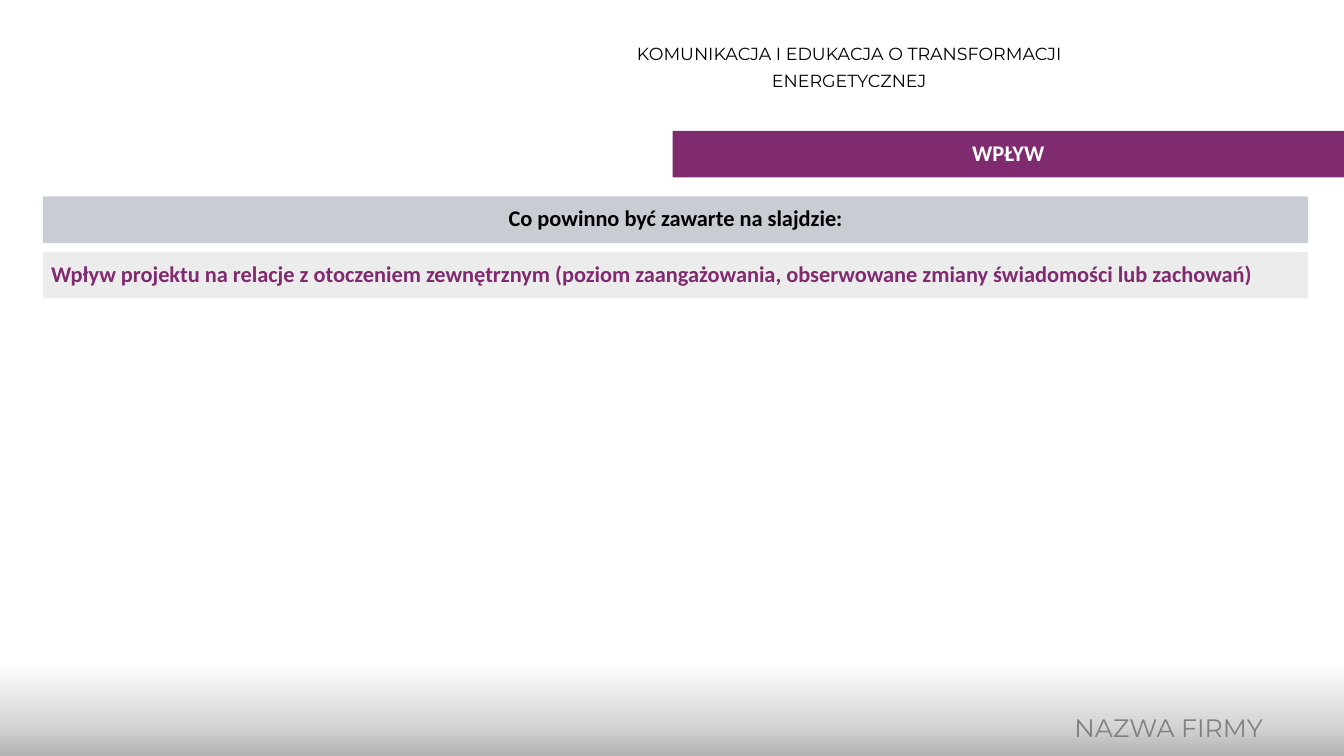
import copy

import pptx
import pptx.dml.color
import pptx.enum.shapes
import pptx.enum.text
import pptx.oxml
import pptx.oxml.ns
import pptx.util

Cm = pptx.util.Cm
Align = pptx.enum.text.PP_ALIGN
Anchor = pptx.enum.text.MSO_ANCHOR
RECTANGLE = pptx.enum.shapes.MSO_SHAPE.RECTANGLE
PURPLE = "802A70"


def color(value):
    return pptx.dml.color.RGBColor.from_string(value)


def write(shape, text, size=16, font="Calibri", fill="000000", bold=False,
          align=Align.CENTER, anchor=Anchor.TOP, spacing=1.0, inset=0.2):
    frame = shape.text_frame
    frame.word_wrap = True
    frame.vertical_anchor = anchor
    frame.margin_left = frame.margin_right = Cm(inset)
    frame.margin_top = frame.margin_bottom = Cm(min(inset, 0.2))
    paragraph = frame.paragraphs[0]
    paragraph.alignment = align
    paragraph.line_spacing = spacing
    run = paragraph.add_run()
    run.text = text
    run.font.size = pptx.util.Pt(size)
    run.font.name = font
    run.font.bold = bold
    run.font.color.rgb = color(fill)


presentation = pptx.Presentation()
presentation.slide_width = Cm(33.87)
presentation.slide_height = Cm(19.05)
slide = presentation.slides.add_slide(presentation.slide_layouts[6])

# Footer gradient, dark at the bottom
footer = slide.shapes.add_shape(RECTANGLE, 0, Cm(16.69), Cm(33.87), Cm(3.02))
footer.shadow.inherit = False
footer.line.fill.background()
footer.fill.gradient()
footer.fill.gradient_angle = 90
stop_list = footer.fill._fill._gradFill.gsLst
stop_list.append(copy.deepcopy(stop_list[-1]))
for stop, position, shade in zip(footer.fill.gradient_stops, (0, 0.5, 1),
                                 ("979797", "D7D7D7", "FFFFFF")):
    stop.position = position
    stop.color.rgb = color(shade)

# Company name and topic
company = slide.shapes.add_textbox(Cm(24.43), Cm(17.55), Cm(7.65), Cm(1.68))
write(company, "NAZWA FIRMY", size=18, font="Montserrat", fill="808080",
      align=Align.RIGHT, anchor=Anchor.MIDDLE, spacing=0.9, inset=0.25)
topic = slide.shapes.add_textbox(Cm(14.76), Cm(0.76), Cm(13.28), Cm(1.7))
write(topic, "KOMUNIKACJA I EDUKACJA O TRANSFORMACJI ENERGETYCZNEJ",
      size=12.5, font="Montserrat", anchor=Anchor.MIDDLE, spacing=1.3, inset=0.25)

# Bars: left, top, width, fill, opacity in percent, text, text colour, alignment
bars = [
    (1.09, 4.95, 31.88, "44546A", 29, "Co powinno być zawarte na slajdzie:",
     "000000", Align.CENTER),
    (1.09, 6.35, 31.88, "BFBFBF", 29,
     "Wpływ projektu na relacje z otoczeniem zewnętrznym (poziom zaangażowania, "
     "obserwowane zmiany świadomości lub zachowań)", PURPLE, Align.LEFT),
    (16.95, 3.3, 16.92, PURPLE, 100, "WPŁYW", "FFFFFF", Align.CENTER),
]
for left, top, width, fill, opacity, text, text_color, align in bars:
    bar = slide.shapes.add_shape(RECTANGLE, Cm(left), Cm(top), Cm(width), Cm(1.17))
    bar.shadow.inherit = False
    bar.line.fill.background()
    bar.fill.solid()
    bar.fill.fore_color.rgb = color(fill)
    if opacity < 100:
        solid = bar.fill._xPr.find(pptx.oxml.ns.qn("a:solidFill"))
        alpha = pptx.oxml.parse_xml(
            f'<a:alpha {pptx.oxml.ns.nsdecls("a")} val="{opacity * 1000}"/>')
        solid[0].append(alpha)
    write(bar, text, fill=text_color, bold=True, align=align)

presentation.save("out.pptx")
